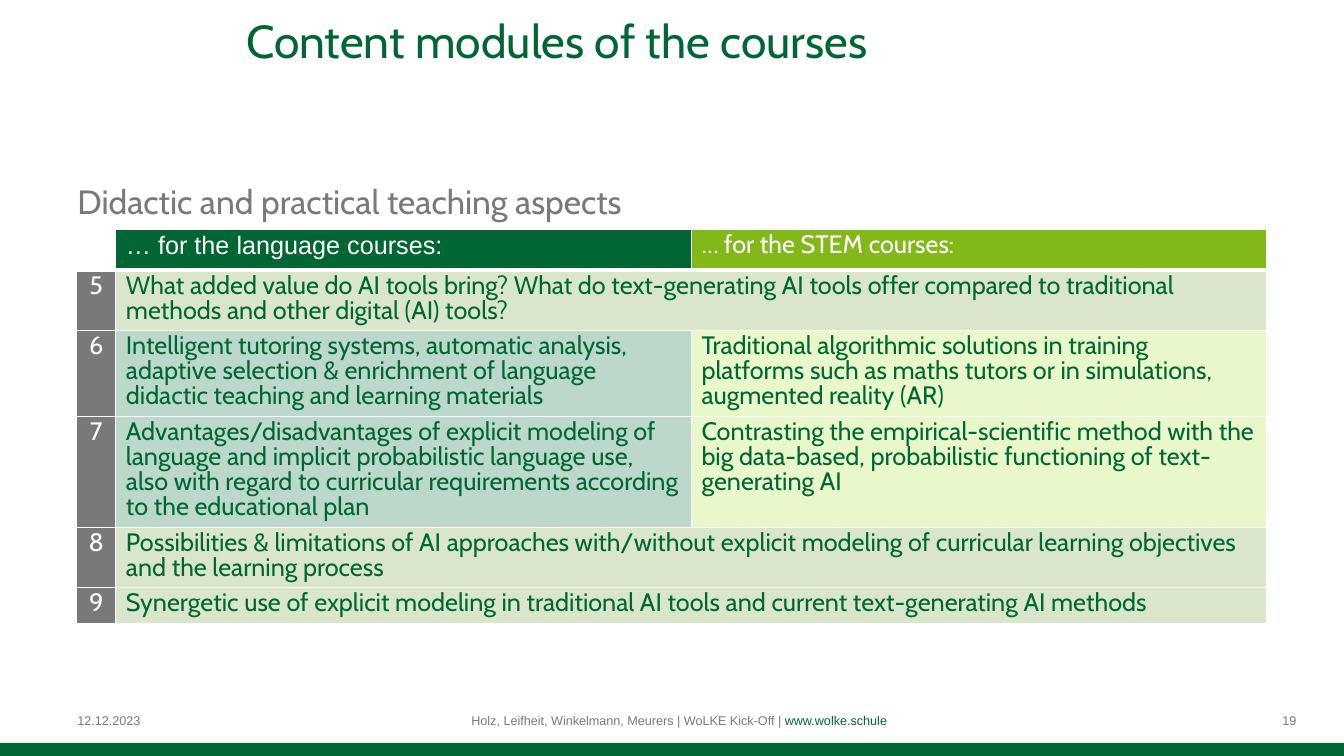
from dataclasses import dataclass

from lxml import etree
from pptx import Presentation
from pptx import util as u
from pptx.dml import color
from pptx.enum import shapes, text
from pptx.oxml import ns

GREEN, LIME, GREY, WHITE = "006633", "83B819", "797979", "FFFFFF"
SHARED, LANGUAGE, STEM = "D9E6CC", "BBD8CA", "E9F8CA"
LEFT, CENTER, RIGHT = text.PP_ALIGN.LEFT, text.PP_ALIGN.CENTER, text.PP_ALIGN.RIGHT
TOP, MIDDLE = text.MSO_ANCHOR.TOP, text.MSO_ANCHOR.MIDDLE
LINE = 18
CELL_PADDING = 7.2


@dataclass(frozen=True)
class Run:
    words: str
    hue: str


@dataclass(frozen=True)
class Label:
    left: float
    top: float
    width: float
    height: float
    runs: tuple[Run, ...]
    size: float
    font: str
    align: text.PP_ALIGN = LEFT
    anchor: text.MSO_ANCHOR = MIDDLE
    insets: tuple[float, float, float, float] = (7.2, 3.6, 7.2, 3.6)


@dataclass(frozen=True)
class Module:
    number: int
    lines: int
    language: str
    stem: str = ""


LABELS = [
    Label(48.24, 8.64, 699.12, 90, (Run("Content modules of the courses", GREEN),),
          33, "Cabin", CENTER, TOP, (7.2, 0, 7.2, 3.6)),
    Label(48.24, 126, 864, 356.4, (Run("Didactic and practical teaching aspects", GREY),),
          24, "Cabin", anchor=TOP),
    Label(48.24, 500.4, 223.92, 28.8, (Run("12.12.2023", GREY),), 9, "Arial"),
    Label(328.32, 500.4, 316.08, 28.8,
          (Run("Holz, Leifheit, Winkelmann, Meurers | WoLKE Kick-Off | ", GREY),
           Run("www.wolke.schule ", GREEN)),
          9, "Arial", CENTER, insets=(5.04, 2.88, 5.04, 2.88)),
    Label(702, 500.4, 223.92, 28.8, (Run("19", GREY),), 9, "Arial", RIGHT,
          insets=(7.2, 3.6, 0, 3.6)),
]

MODULES = [
    Module(5, 2, "What added value do AI tools bring? What do text-generating AI tools offer "
                 "compared to traditional methods and other digital (AI) tools?"),
    Module(6, 3, "Intelligent tutoring systems, automatic analysis, adaptive selection & "
                 "enrichment of language didactic teaching and learning materials",
           "Traditional algorithmic solutions in training platforms such as maths tutors "
           "or in simulations, augmented reality (AR)"),
    Module(7, 4, "Advantages/disadvantages of explicit modeling of language and implicit "
                 "probabilistic language use, also with regard to curricular requirements "
                 "according to the educational plan",
           "Contrasting the empirical-scientific method with the big data-based, "
           "probabilistic functioning of text-generating AI"),
    Module(8, 2, "Possibilities & limitations of AI approaches with/without explicit modeling "
                 "of curricular learning objectives and the learning process"),
    Module(9, 1, "Synergetic use of explicit modeling in traditional AI tools and current "
                 "text-generating AI methods"),
]


def rgb(value: str) -> color.RGBColor:
    return color.RGBColor.from_string(value)


def add_label(slide, label: Label) -> None:
    box = slide.shapes.add_textbox(
        u.Pt(label.left), u.Pt(label.top), u.Pt(label.width), u.Pt(label.height))
    frame = box.text_frame
    frame.word_wrap = True
    frame.vertical_anchor = label.anchor
    (frame.margin_left, frame.margin_top,
     frame.margin_right, frame.margin_bottom) = map(u.Pt, label.insets)
    paragraph = frame.paragraphs[0]
    paragraph.alignment = label.align
    paragraph.font.size = u.Pt(label.size)
    paragraph.font.name = label.font
    for part in label.runs:
        run = paragraph.add_run()
        run.text = part.words
        run.font.color.rgb = rgb(part.hue)


def add_borders(cell, bottom: float) -> None:
    properties = cell._tc.get_or_add_tcPr()
    for side, width in (("L", 1), ("R", 1), ("T", 1), ("B", bottom)):
        border = etree.SubElement(properties, ns.qn(f"a:ln{side}"), w=str(u.Pt(width)))
        fill = etree.SubElement(border, ns.qn("a:solidFill"))
        etree.SubElement(fill, ns.qn("a:srgbClr"), val=WHITE)


def fill_cell(cell, words: str, background: str, hue: str,
              font: str = "Cabin", align: text.PP_ALIGN = LEFT) -> None:
    cell.fill.solid()
    cell.fill.fore_color.rgb = rgb(background)
    paragraph = cell.text_frame.paragraphs[0]
    paragraph.text = words
    paragraph.alignment = align
    paragraph.line_spacing = u.Pt(LINE)
    paragraph.font.size = u.Pt(18)
    paragraph.font.name = font
    paragraph.font.color.rgb = rgb(hue)


def add_module_table(slide) -> None:
    widths = [28.08, 411.12, 411.12]
    heights = [28.8] + [module.lines * LINE + CELL_PADDING for module in MODULES]
    table = slide.shapes.add_table(
        len(heights), len(widths), u.Pt(54.72), u.Pt(164.16),
        u.Pt(sum(widths)), u.Pt(sum(heights))).table
    table.horz_banding = False
    for column, width in zip(table.columns, widths):
        column.width = u.Pt(width)
    for index, (row, height) in enumerate(zip(table.rows, heights)):
        row.height = u.Pt(height)
        for cell in row.cells:
            add_borders(cell, 1 if index else 3)

    table.cell(0, 0).fill.background()
    fill_cell(table.cell(0, 1), "… for the language courses:", GREEN, WHITE, "Arial")
    fill_cell(table.cell(0, 2), "… for the STEM courses:", LIME, WHITE)
    for index, module in enumerate(MODULES, start=1):
        number, language, stem = (table.cell(index, column) for column in range(3))
        number.margin_left = number.margin_right = u.Pt(3.6)
        fill_cell(number, str(module.number), GREY, WHITE, align=CENTER)
        if module.stem:
            fill_cell(language, module.language, LANGUAGE, GREEN)
            fill_cell(stem, module.stem, STEM, GREEN)
        else:
            language.merge(stem)
            fill_cell(language, module.language, SHARED, GREEN)


def add_footer_bar(slide) -> None:
    bar = slide.shapes.add_shape(
        shapes.MSO_SHAPE.RECTANGLE, u.Pt(0), u.Pt(530.64), u.Pt(960), u.Pt(9.36))
    bar.shadow.inherit = False
    bar.fill.solid()
    bar.fill.fore_color.rgb = rgb(GREEN)
    bar.line.fill.background()


def main() -> None:
    presentation = Presentation()
    presentation.slide_width = u.Pt(960)
    presentation.slide_height = u.Pt(540)
    slide = presentation.slides.add_slide(presentation.slide_layouts[6])
    add_footer_bar(slide)
    for label in LABELS:
        add_label(slide, label)
    add_module_table(slide)
    presentation.save("out.pptx")


if __name__ == "__main__":
    main()
